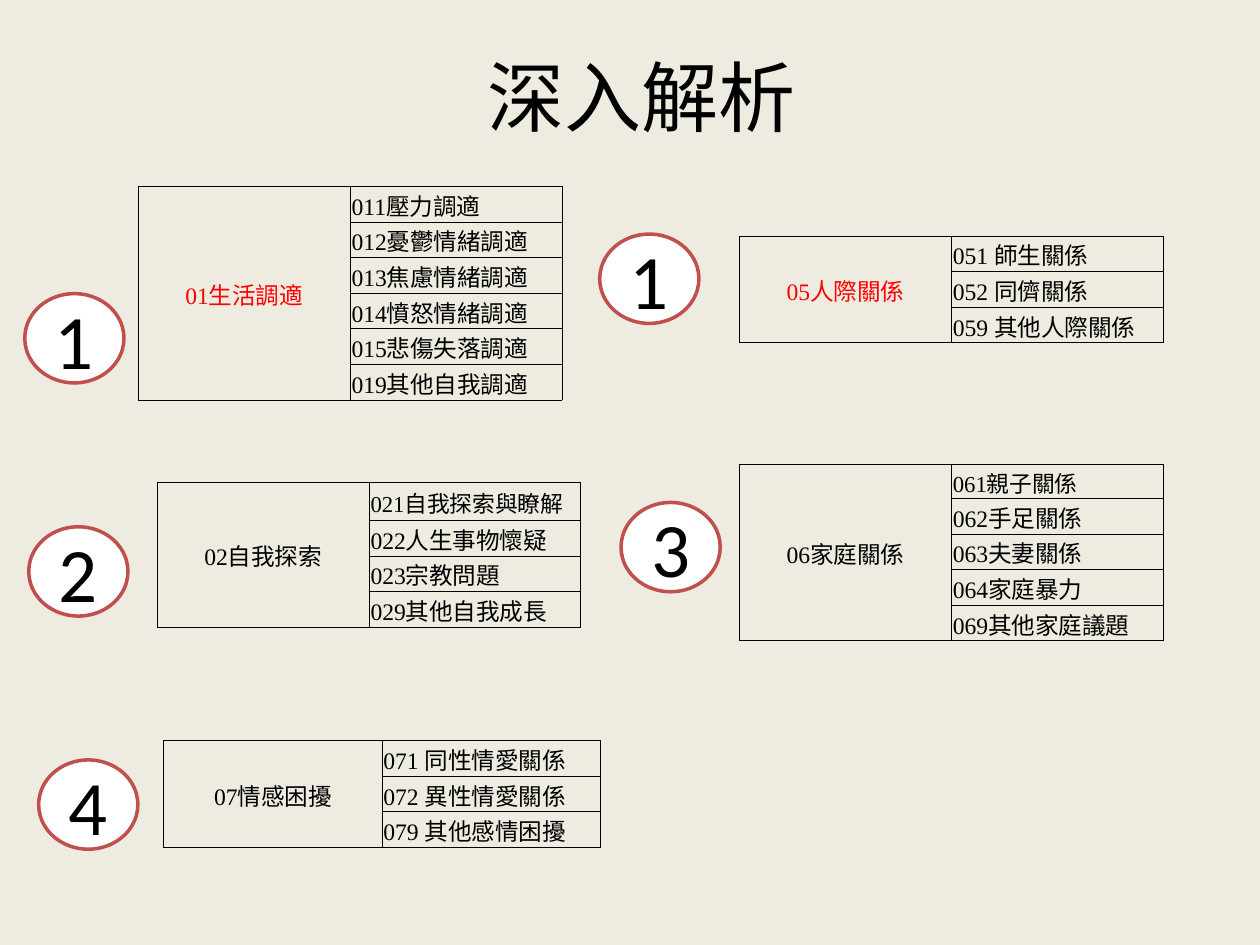
from dataclasses import dataclass

import pptx
import pptx.dml.color
import pptx.enum.shapes
import pptx.enum.text
import pptx.oxml
import pptx.oxml.ns
import pptx.util
from pptx.util import Cm

COLORS = {"bg": "EEECE1", "text": "000000", "accent": "FF0000",
          "ring": "C0504D", "disc": "FFFFFF"}
LATIN, CJK, HEADING = "Times New Roman", "Noto Sans CJK SC", "Calibri"
ROW_H, INSET = 0.66, 0.03
DISC_W, DISC_H = 2.0, 1.8
CENTER = pptx.enum.text.PP_ALIGN.CENTER
LEFT = pptx.enum.text.PP_ALIGN.LEFT
MIDDLE = pptx.enum.text.MSO_ANCHOR.MIDDLE


@dataclass
class Category:
    code: str
    name: str
    items: list[tuple[str, str]]
    left: float
    top: float
    color: str = "text"
    col_w: float = 4.27
    first_h: float = ROW_H
    first_size: float = 13.5


@dataclass
class Rank:
    number: str
    left: float
    top: float


CATEGORIES = [
    Category("01", "生活調適",
             [("011", "壓力調適"), ("012", "憂鬱情緒調適"), ("013", "焦慮情緒調適"),
              ("014", "憤怒情緒調適"), ("015", "悲傷失落調適"), ("019", "其他自我調適")],
             2.79, 3.76, color="accent"),
    Category("05", "人際關係",
             [("051 ", "師生關係"), ("052 ", "同儕關係"), ("059 ", "其他人際關係")],
             14.91, 4.76, color="accent"),
    Category("02", "自我探索",
             [("021", "自我探索與瞭解"), ("022", "人生事物懷疑"),
              ("023", "宗教問題"), ("029", "其他自我成長")],
             3.17, 9.73, first_h=0.76, first_size=13),
    Category("07", "情感困擾",
             [("071 ", "同性情愛關係"), ("072 ", "異性情愛關係"), ("079 ", "其他感情困擾")],
             3.3, 14.93, col_w=4.4),
    Category("06", "家庭關係",
             [("061", "親子關係"), ("062", "手足關係"), ("063", "夫妻關係"),
              ("064", "家庭暴力"), ("069", "其他家庭議題")],
             14.91, 9.36, first_size=13),
]

RANKS = [Rank("1", 0.5, 5.92), Rank("1", 12.09, 4.72), Rank("2", 0.58, 10.62),
         Rank("3", 12.52, 10.13), Rank("4", 0.78, 15.32)]


def rgb(key: str) -> pptx.dml.color.RGBColor:
    return pptx.dml.color.RGBColor.from_string(COLORS[key])


def add_text(p, text: str, *, size: float, font: str = LATIN,
             color: str = "text", align=LEFT) -> None:
    p.alignment = align
    r = p.add_run()
    r.text = text
    r.font.size = pptx.util.Pt(size)
    r.font.name = font
    r.font.color.rgb = rgb(color)
    ea = pptx.oxml.parse_xml(
        f'<a:ea {pptx.oxml.ns.nsdecls("a")} typeface="{CJK}"/>')
    r.font._element.append(ea)


def format_cell(cell) -> None:
    cell.margin_left = cell.margin_right = cell.margin_top = Cm(INSET)
    cell.margin_bottom = 0
    cell.vertical_anchor = MIDDLE
    tc_pr = cell._tc.get_or_add_tcPr()
    for side in ("lnL", "lnR", "lnT", "lnB"):
        tc_pr.append(pptx.oxml.parse_xml(
            f'<a:{side} {pptx.oxml.ns.nsdecls("a")} w="6350"><a:solidFill>'
            f'<a:srgbClr val="{COLORS["text"]}"/></a:solidFill></a:{side}>'))
    cell.fill.background()


def add_entry(cell, code: str, name: str, **fmt) -> None:
    p = cell.text_frame.paragraphs[0]
    add_text(p, code, **fmt)
    add_text(p, name, **(fmt | {"font": CJK}))


def add_category(s, cat: Category) -> None:
    n = len(cat.items)
    table = s.shapes.add_table(n, 2, Cm(cat.left), Cm(cat.top),
                               Cm(2 * cat.col_w), Cm(n * ROW_H)).table
    table.first_row = table.horz_banding = False
    for col in table.columns:
        col.width = Cm(cat.col_w)
    for cell in table.iter_cells():
        format_cell(cell)
    table.cell(0, 0).merge(table.cell(n - 1, 0))
    add_entry(table.cell(0, 0), cat.code, cat.name,
              size=13.5, color=cat.color, align=CENTER)
    for i, (code, name) in enumerate(cat.items):
        table.rows[i].height = Cm(ROW_H if i else cat.first_h)
        add_entry(table.cell(i, 1), code, name, size=13.5 if i else cat.first_size)


def add_rank(s, rank: Rank) -> None:
    sp = s.shapes.add_shape(pptx.enum.shapes.MSO_SHAPE.OVAL, Cm(rank.left),
                            Cm(rank.top), Cm(DISC_W), Cm(DISC_H))
    sp.shadow.inherit = False
    sp.fill.solid()
    sp.fill.fore_color.rgb = rgb("disc")
    sp.line.color.rgb = rgb("ring")
    sp.line.width = pptx.util.Pt(2)
    tf = sp.text_frame
    tf.vertical_anchor = MIDDLE
    add_text(tf.paragraphs[0], rank.number, size=44, font=HEADING, align=CENTER)


def main() -> None:
    prs = pptx.Presentation()
    prs.slide_width, prs.slide_height = Cm(25.4), Cm(19.05)
    s = prs.slides.add_slide(prs.slide_layouts[5])
    s.background.fill.solid()
    s.background.fill.fore_color.rgb = rgb("bg")

    # Title
    title = s.shapes.title
    title.left, title.top = Cm(1.5), Cm(0.33)
    title.width, title.height = Cm(22.86), Cm(3.18)
    title.text_frame.vertical_anchor = MIDDLE
    add_text(title.text_frame.paragraphs[0], "深入解析",
             size=44, font=HEADING, align=CENTER)

    # Category tables and their ranks
    for cat in CATEGORIES:
        add_category(s, cat)
    for rank in RANKS:
        add_rank(s, rank)

    prs.save("out.pptx")


if __name__ == "__main__":
    main()
